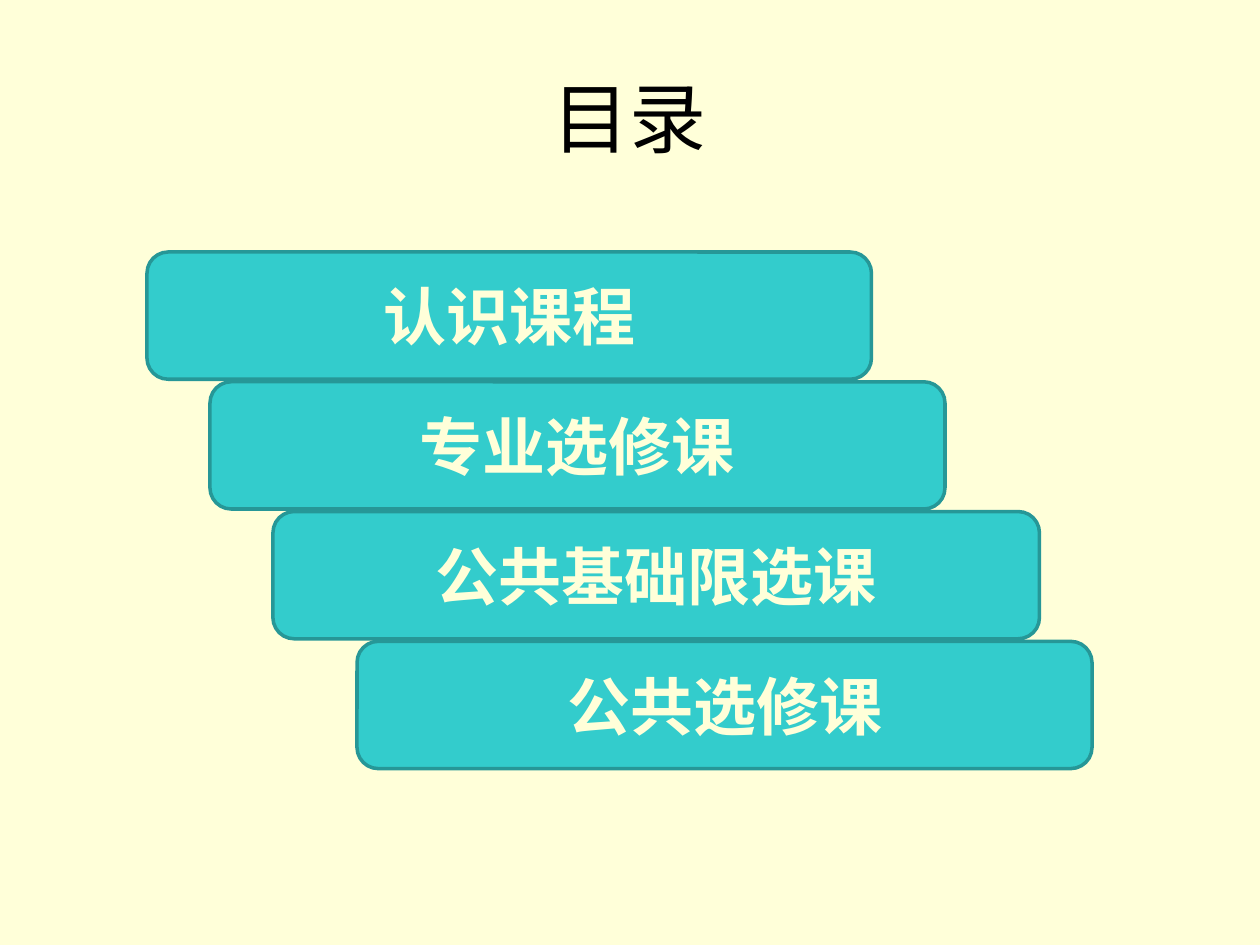
import lxml.etree
import pptx
import pptx.dml.color
import pptx.enum.shapes
import pptx.enum.text
import pptx.oxml.ns
import pptx.util

COLORS = {
    "background": "FFFFD9",
    "title": "000000",
    "bar": "33CCCC",
    "outline": "269797",
}
CJK_FONT = "Noto Sans CJK SC"
COLUMNS, ROWS = 60, 150

# Label, left column and width in columns
CHAPTERS = [
    ("认识课程", 7, 34.5),
    ("专业选修课", 10, 35),
    ("公共基础限选课", 13, 36.5),
    ("公共选修课", 17, 35),
]
FIRST_ROW, ROW_PITCH, BAR_HEIGHT = 40, 20.6, 20.2


def rgb(name):
    return pptx.dml.color.RGBColor.from_string(COLORS[name])


class SlideBuilder:
    def __init__(self, presentation):
        self.column = presentation.slide_width / COLUMNS
        self.row = presentation.slide_height / ROWS
        self.slide = presentation.slides.add_slide(presentation.slide_layouts[6])
        fill = self.slide.background.fill
        fill.solid()
        fill.fore_color.rgb = rgb("background")

    def box(self, left, top, width, height):
        """Convert grid units to whole EMU lengths."""
        return (round(left * self.column), round(top * self.row),
                round(width * self.column), round(height * self.row))

    def set_text(self, shape, text, size, font_name, color, bold=False):
        frame = shape.text_frame
        frame.word_wrap = True
        frame.vertical_anchor = pptx.enum.text.MSO_ANCHOR.MIDDLE
        paragraph = frame.paragraphs[0]
        paragraph.text = text
        paragraph.alignment = pptx.enum.text.PP_ALIGN.CENTER
        font = paragraph.font
        font.size = pptx.util.Pt(size)
        font.name = font_name
        font.bold = bold
        font.color.rgb = rgb(color)
        lxml.etree.SubElement(font._element, pptx.oxml.ns.qn("a:ea"), typeface=CJK_FONT)

    def title(self, text, *place):
        shape = self.slide.shapes.add_textbox(*self.box(*place))
        self.set_text(shape, text, 44, CJK_FONT, "title")

    def bar(self, text, *place):
        shape = self.slide.shapes.add_shape(
            pptx.enum.shapes.MSO_SHAPE.ROUNDED_RECTANGLE, *self.box(*place))
        shape.shadow.inherit = False
        shape.fill.solid()
        shape.fill.fore_color.rgb = rgb("bar")
        shape.line.color.rgb = rgb("outline")
        shape.line.width = pptx.util.Pt(2)
        self.set_text(shape, text, 36, "Arial", "background", bold=True)


def main():
    presentation = pptx.Presentation()
    presentation.slide_width = pptx.util.Inches(10)
    presentation.slide_height = pptx.util.Inches(7.5)
    builder = SlideBuilder(presentation)
    builder.title("目录", 3, 6, 54, 25)
    for index, (label, left, width) in enumerate(CHAPTERS):
        builder.bar(label, left, FIRST_ROW + index * ROW_PITCH, width, BAR_HEIGHT)
    presentation.save("out.pptx")


if __name__ == "__main__":
    main()
